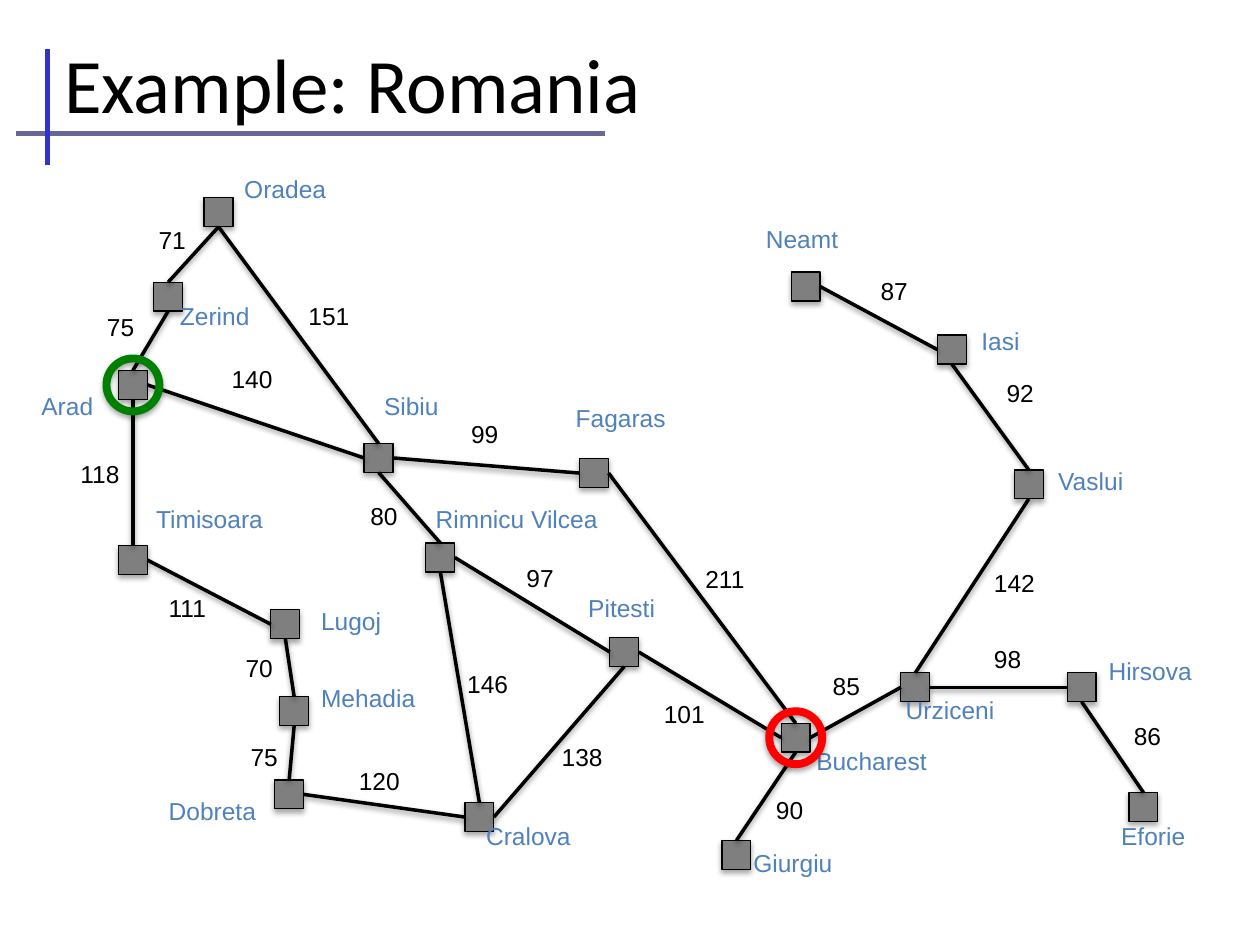
"""Build the Romania road map slide: cities, roads, distances, start and goal."""
from pptx import Presentation
from pptx.dml.color import RGBColor
from pptx.enum.shapes import MSO_CONNECTOR, MSO_SHAPE as SHAPE
from pptx.enum.text import MSO_ANCHOR, PP_ALIGN
from pptx.oxml import parse_xml
from pptx.oxml.ns import nsdecls
from pptx.util import Inches, Pt

deck = Presentation()
deck.slide_width, deck.slide_height = Inches(10), Inches(7.5)
CELL = deck.slide_width // 100
NODE, RING, LABEL_HEIGHT = 2.3, 4.2, 4.1
TOP, LEFT, BOTTOM, RIGHT = range(4)


def cells(*counts):
    return [round(count * CELL) for count in counts]


def color(hex_string):
    return RGBColor.from_string(hex_string)


slide = deck.slides.add_slide(deck.slide_layouts[5])
shapes = slide.shapes

title = shapes.title
title.left, title.top, title.width, title.height = cells(4.1, 1, 89.2, 11.2)
title.text_frame.text = "Example: Romania"
title.text_frame.vertical_anchor = MSO_ANCHOR.MIDDLE
heading = title.text_frame.paragraphs[0]
heading.alignment = PP_ALIGN.LEFT
heading.font.name, heading.font.size = "Calibri", Pt(44)
heading.font.color.rgb = color("000000")

title_rules = [((1.3, 10.6, 48, 10.6), "666699"), ((3.8, 13.1, 3.8, 3.9), "3333CC")]
for ends, hue in title_rules:
    rule = shapes.add_connector(MSO_CONNECTOR.STRAIGHT, *cells(*ends))
    rule.line.color.rgb, rule.line.width = color(hue), Pt(3)
    rule._element.spPr.append(parse_xml(f"<a:effectLst {nsdecls('a')}/>"))

cities = {
    "Oradea": (16.2, 15.7, 18.4, 13.3, 10.4),
    "Zerind": (12.2, 22.4, 13.3, 23.4, 9.2),
    "Arad": (9.4, 29.4, 2.3, 30.5, 7.5),
    "Timisoara": (9.4, 43.3, 11.4, 39.5, 12.8),
    "Sibiu": (28.9, 35.2, 29.5, 30.5, 7.7),
    "Lugoj": (21.5, 48.4, 24.5, 47.6, 8.3),
    "Fagaras": (46, 36.4, 44.7, 31.5, 11.2),
    "Rimnicu Vilcea": (33.8, 43.1, 33.6, 39.5, 18.1),
    "Iasi": (74.4, 26.6, 76.9, 25.4, 6.1),
    "Neamt": (62.8, 21.6, 59.8, 17.3, 9.4),
    "Urziceni": (71.5, 53.4, 70.9, 54.7, 11),
    "Bucharest": (62, 57.4, 63.8, 58.7, 13.1),
    "Vaslui": (80.5, 37.3, 83, 36.5, 8.9),
    "Giurgiu": (57.3, 66.7, 58.8, 66.8, 10.1),
    "Hirsova": (84.7, 53.4, 87, 51.6, 10.5),
    "Eforie": (89.6, 62.9, 88, 64.7, 8.6),
    "Dobreta": (21.8, 61.9, 12.4, 62.7, 10.9),
    "Mehadia": (22.2, 55.3, 24.5, 53.7, 11.6),
    "Pitesti": (48.4, 50.6, 45.7, 46.6, 8.9),
    "Cralova": (36.9, 63.7, 37.6, 64.7, 10.6),
}
roads = [
    ("Arad", TOP, "Zerind", BOTTOM, 75, 7.5, 24.3),
    ("Zerind", TOP, "Oradea", BOTTOM, 71, 11.6, 17.4),
    ("Sibiu", TOP, "Oradea", BOTTOM, 151, 23.5, 23.4),
    ("Arad", RIGHT, "Sibiu", LEFT, 140, 17.4, 28.4),
    ("Rimnicu Vilcea", TOP, "Sibiu", BOTTOM, 80, 28.4, 39.3),
    ("Sibiu", RIGHT, "Fagaras", LEFT, 99, 36.4, 32.8),
    ("Timisoara", TOP, "Arad", BOTTOM, 118, 5.4, 35.9),
    ("Timisoara", RIGHT, "Lugoj", LEFT, 111, 12.4, 46.6),
    ("Mehadia", TOP, "Lugoj", BOTTOM, 70, 18.5, 51.3),
    ("Dobreta", TOP, "Mehadia", BOTTOM, 75, 18.9, 58.4),
    ("Cralova", LEFT, "Dobreta", RIGHT, 120, 27.5, 60.3),
    ("Cralova", TOP, "Rimnicu Vilcea", BOTTOM, 146, 36.1, 52.6),
    ("Pitesti", LEFT, "Rimnicu Vilcea", RIGHT, 97, 40.8, 44.2),
    ("Cralova", RIGHT, "Pitesti", BOTTOM, 138, 43.6, 58.4),
    ("Bucharest", LEFT, "Pitesti", RIGHT, 101, 51.7, 55),
    ("Bucharest", TOP, "Fagaras", RIGHT, 211, 55, 44.3),
    ("Giurgiu", TOP, "Bucharest", BOTTOM, 90, 60.6, 62.6),
    ("Bucharest", RIGHT, "Urziceni", LEFT, 85, 65.1, 52.8),
    ("Iasi", LEFT, "Neamt", RIGHT, 87, 68.9, 21.4),
    ("Vaslui", TOP, "Iasi", BOTTOM, 92, 78.9, 29.5),
    ("Urziceni", TOP, "Vaslui", BOTTOM, 142, 77.9, 44.6),
    ("Urziceni", RIGHT, "Hirsova", LEFT, 98, 77.9, 50.6),
    ("Eforie", TOP, "Hirsova", BOTTOM, 86, 89, 56.7),
]

nodes = {}
for city, (x, y, *_) in cities.items():
    node = nodes[city] = shapes.add_shape(SHAPE.RECTANGLE, *cells(x, y, NODE, NODE))
    node.fill.solid()
    node.fill.fore_color.rgb = color("7F7F7F")
    node.line.color.rgb, node.line.width = color("000000"), Pt(0.75)

for start, start_side, end, end_side, *_ in roads:
    road = shapes.add_connector(MSO_CONNECTOR.STRAIGHT, 0, 0, 0, 0)
    road.begin_connect(nodes[start], start_side)
    road.end_connect(nodes[end], end_side)
    road.line.color.rgb, road.line.width = color("000000"), Pt(2)

labels = [(str(distance), x, y, 6.4 if distance > 99 else 5.1, "000000")
          for *_, distance, x, y in roads]
labels += [(city, *place[2:], "4F81BD") for city, place in cities.items()]
for wording, x, y, width, hue in labels:
    label = shapes.add_textbox(*cells(x, y, width, LABEL_HEIGHT)).text_frame
    label.word_wrap = True
    label.text = wording
    line = label.paragraphs[0]
    line.font.name, line.font.size = "Arial", Pt(14)
    line.font.color.rgb = color(hue)

for city, hue in (("Arad", "008000"), ("Bucharest", "FF0000")):
    x, y = (edge + (NODE - RING) / 2 for edge in cities[city][:2])
    ring = shapes.add_shape(SHAPE.OVAL, *cells(x, y, RING, RING))
    ring.fill.background()
    ring.line.color.rgb, ring.line.width = color(hue), Pt(4.5)

deck.save("out.pptx")
